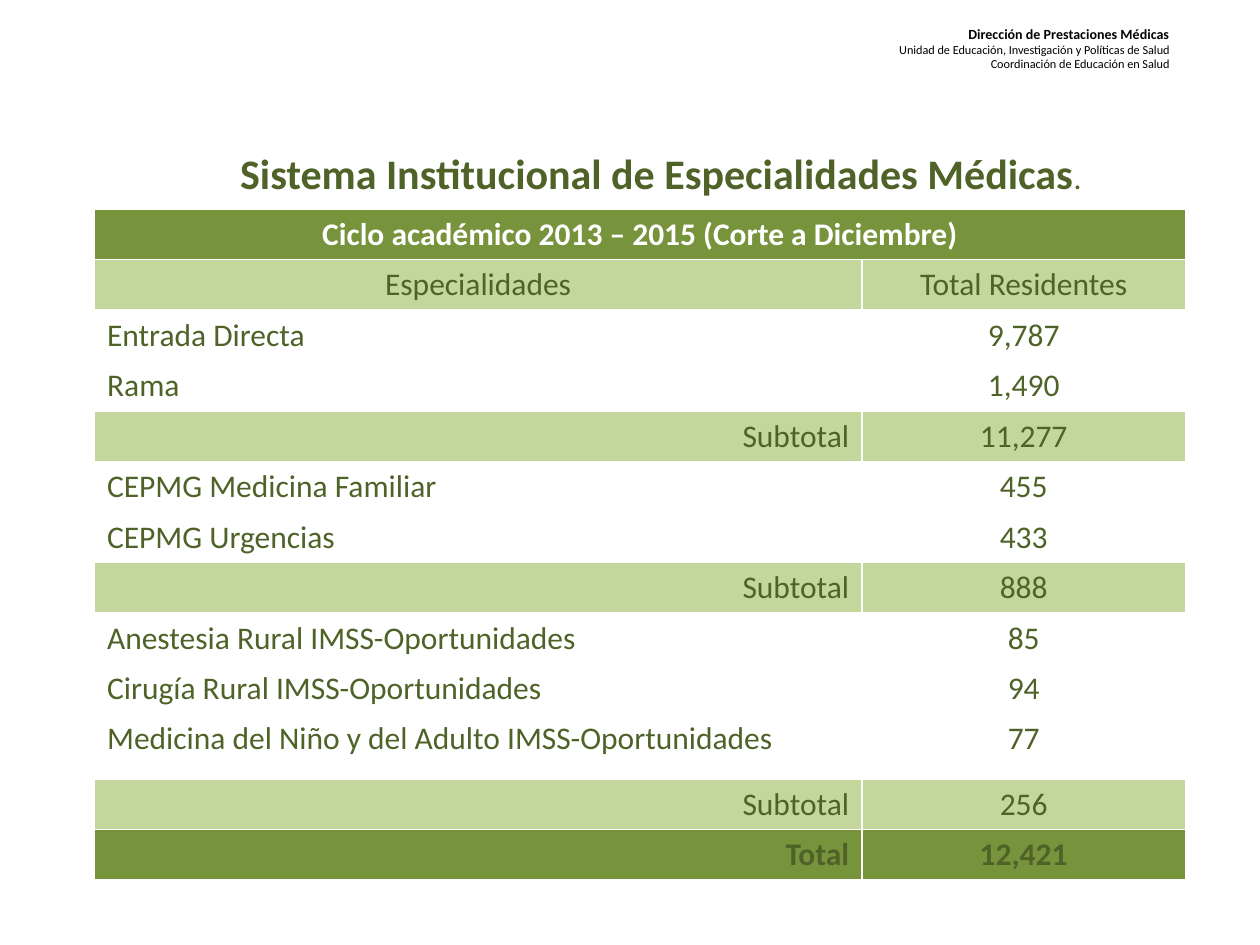
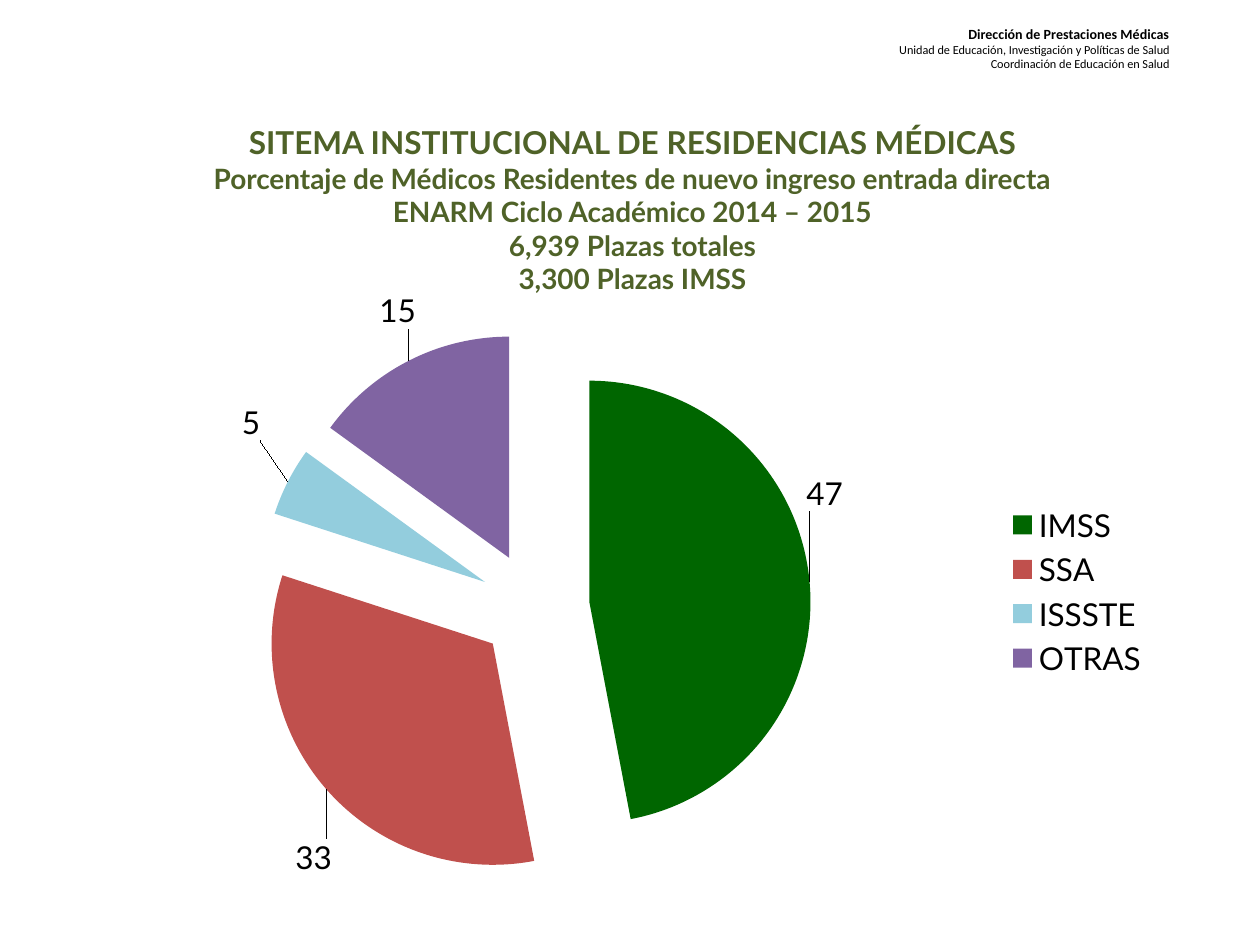
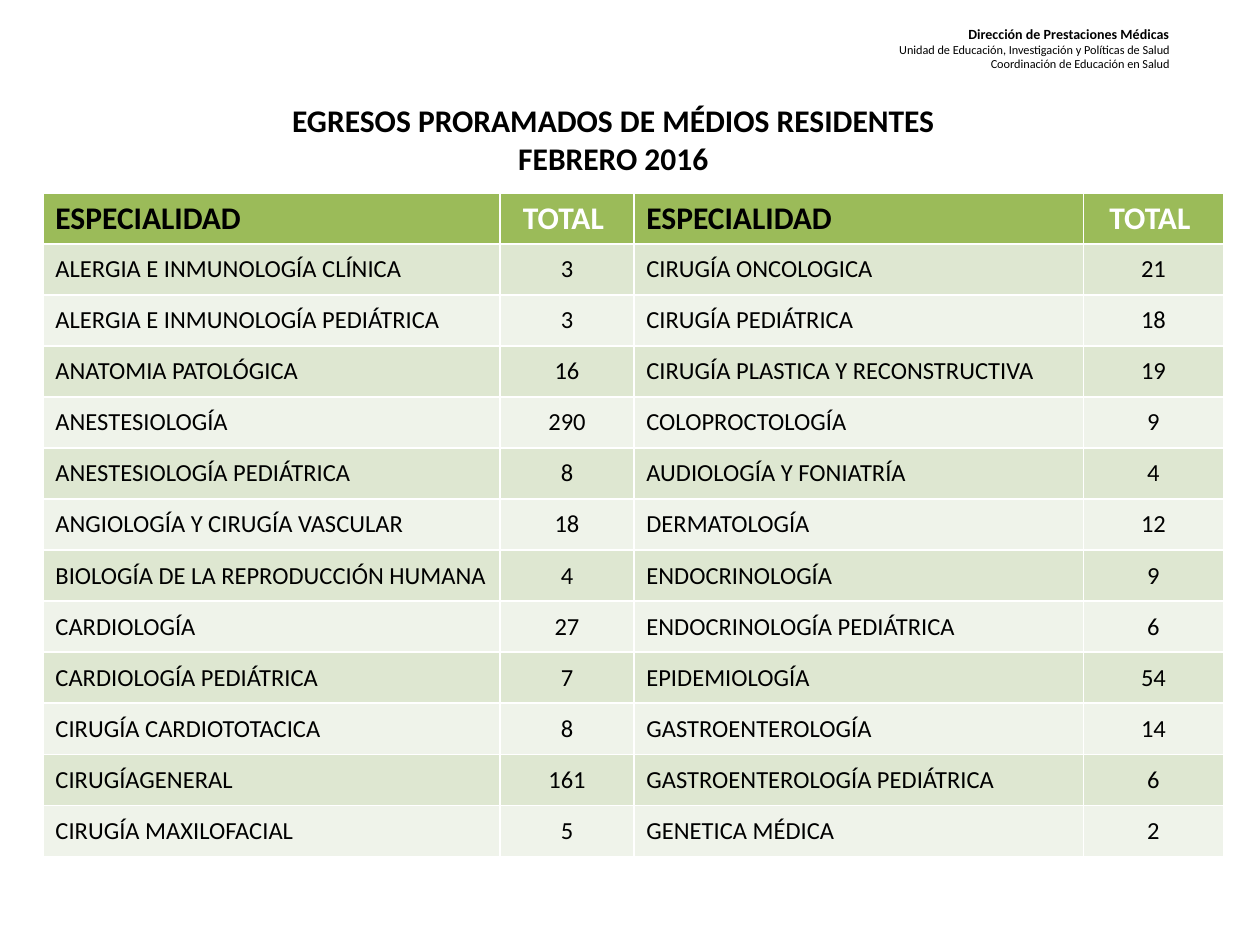
from pptx import Presentation
from pptx.chart.data import CategoryChartData
from pptx.dml.color import RGBColor
from pptx.enum.chart import XL_CHART_TYPE, XL_LABEL_POSITION, XL_LEGEND_POSITION
from pptx.enum.text import MSO_ANCHOR, PP_ALIGN
from pptx.oxml import parse_xml
from pptx.oxml.ns import nsdecls, qn
from pptx.util import Inches, Pt

LEFT, CENTER, RIGHT = PP_ALIGN.LEFT, PP_ALIGN.CENTER, PP_ALIGN.RIGHT
MIDDLE, TOP = MSO_ANCHOR.MIDDLE, MSO_ANCHOR.TOP
PIE = XL_CHART_TYPE.PIE
OUTSIDE_END = XL_LABEL_POSITION.OUTSIDE_END
LEGEND_RIGHT = XL_LEGEND_POSITION.RIGHT

BLACK, WHITE = "000000", "FFFFFF"
DARK_GREEN, MID_GREEN, PALE_GREEN = "4F6228", "77933C", "C3D69B"
HEADER_GREEN, BAND_DARK, BAND_LIGHT = "9BBB59", "DEE7D1", "EFF3EA"
BODY_FONT, CHART_FONT = "Calibri", "Lato"


def write_lines(text_frame, lines, color, font_name=BODY_FONT):
    """Write one paragraph per line; a line is (alignment, [(text, size, bold), ...])."""
    for index, (alignment, runs) in enumerate(lines):
        paragraph = text_frame.paragraphs[0] if index == 0 else text_frame.add_paragraph()
        paragraph.alignment = alignment
        for text, size, bold in runs:
            run = paragraph.add_run()
            run.text = text
            run.font.name = font_name
            run.font.size = Pt(size)
            run.font.bold = bold
            run.font.color.rgb = RGBColor.from_string(color)


def write_cell(cell, text, alignment, size, bold, color, fill, anchor=TOP):
    write_lines(cell.text_frame, [(alignment, [(text, size, bold)])], color)
    cell.vertical_anchor = anchor
    if fill:
        cell.fill.solid()
        cell.fill.fore_color.rgb = RGBColor.from_string(fill)
    else:
        cell.fill.background()


presentation = Presentation()
presentation.slide_width = Inches(10)
presentation.slide_height = Inches(7.5)

# Page header and title of every slide
page_header = [
    (RIGHT, [("Dirección de Prestaciones Médicas", 8, True)]),
    (RIGHT, [("Unidad de Educación, Investigación y Políticas de Salud", 7, False)]),
    (RIGHT, [("Coordinación de Educación en Salud", 7, False)]),
]
specialties_title = [
    (CENTER, [("Sistema Institucional de Especialidades Médicas", 24, True), (".", 18, False)]),
]
admissions_title = [
    (CENTER, [("SITEMA INSTITUCIONAL DE RESIDENCIAS MÉDICAS", 18, True)]),
    (CENTER, [("Porcentaje de Médicos Residentes de nuevo ingreso entrada directa", 16, True)]),
    (CENTER, [("ENARM Ciclo Académico 2014 – 2015", 16, True)]),
    (CENTER, [("6,939 Plazas totales", 16, True)]),
    (CENTER, [("3,300 Plazas IMSS", 16, True)]),
]
graduates_title = [
    (LEFT, [("EGRESOS PRORAMADOS DE MÉDIOS RESIDENTES", 18, True)]),
    (CENTER, [("FEBRERO 2016", 18, True)]),
]
titles = [
    (specialties_title, (0.98, 1.12, 8.53, 0.51), DARK_GREEN, BODY_FONT, True),
    (admissions_title, (0.35, 0.93, 9.34, 1.75), DARK_GREEN, CHART_FONT, True),
    (graduates_title, (2.22, 0.75, 5.41, 0.71), BLACK, BODY_FONT, False),
]
slides = []
for title, title_place, color, font_name, wraps in titles:
    slide = presentation.slides.add_slide(presentation.slide_layouts[6])
    slides.append(slide)
    header_place = (6.69, 0.15, 2.69, 0.62)
    for lines, place, text_color, font, wrap in (
        (page_header, header_place, BLACK, BODY_FONT, True),
        (title, title_place, color, font_name, wraps),
    ):
        text_frame = slide.shapes.add_textbox(*map(Inches, place)).text_frame
        text_frame.word_wrap = wrap
        write_lines(text_frame, lines, text_color, font)
specialties_slide, admissions_slide, graduates_slide = slides

# Slide 1: residents by specialty group
resident_rows = [
    ("Especialidades", "Total Residentes"),
    ("Entrada Directa", "9,787"),
    ("Rama", "1,490"),
    ("Subtotal", "11,277"),
    ("CEPMG Medicina Familiar", "455"),
    ("CEPMG Urgencias", "433"),
    ("Subtotal", "888"),
    ("Anestesia Rural IMSS-Oportunidades", "85"),
    ("Cirugía Rural IMSS-Oportunidades", "94"),
    ("Medicina del Niño y del Adulto IMSS-Oportunidades", "77"),
    ("Subtotal", "256"),
    ("Total", "12,421"),
]
row_styles = {  # label: (alignment, fill)
    "Especialidades": (CENTER, PALE_GREEN),
    "Subtotal": (RIGHT, PALE_GREEN),
    "Total": (RIGHT, MID_GREEN),
}
table = specialties_slide.shapes.add_table(
    len(resident_rows) + 1, 2, Inches(0.75), Inches(1.66), Inches(8.66), Inches(5.32)
).table
table.horz_banding = False
table.columns[0].width = Inches(6.09)
table.columns[1].width = Inches(2.57)
for row in table.rows:
    row.height = Inches(0.4)
table.rows[10].height = Inches(0.52)
table.cell(0, 0).merge(table.cell(0, 1))
write_cell(table.cell(0, 0), "Ciclo académico 2013 – 2015 (Corte a Diciembre)",
           CENTER, 18, True, WHITE, MID_GREEN)
for row_index, (label, count) in enumerate(resident_rows, start=1):
    alignment, fill = row_styles.get(label, (LEFT, None))
    bold = label == "Total"
    write_cell(table.cell(row_index, 0), label, alignment, 18, bold, DARK_GREEN, fill)
    write_cell(table.cell(row_index, 1), count, CENTER, 18, bold, DARK_GREEN, fill)

# Slide 2: share of new residents by institution
institutions = [  # name, percentage, colour, label offset as a share of the chart
    ("IMSS", 47, "006600", (-0.01, -0.11)),
    ("SSA", 33, "C0504D", (0.01, 0.07)),
    ("ISSSTE", 5, "93CDDD", (-0.02, -0.06)),
    ("OTRAS", 15, "8064A2", (0.01, -0.04)),
]
chart_data = CategoryChartData(number_format="#,##0")
chart_data.categories = [name for name, *_ in institutions]
chart_data.add_series("Series 1", [percentage for _, percentage, *_ in institutions])
chart = admissions_slide.shapes.add_chart(
    PIE, Inches(0.78), Inches(2.22), Inches(8.44), Inches(4.95), chart_data
).chart
chart.has_title = False
chart.font.name = CHART_FONT
chart.font.size = Pt(18)
chart.font.color.rgb = RGBColor.from_string(BLACK)
chart.has_legend = True
chart.legend.position = LEGEND_RIGHT
chart.legend.include_in_layout = False
plot = chart.plots[0]
plot.vary_by_categories = True
series = plot.series[0]
series.data_labels.show_value = True
series.data_labels.number_format = "#,##0"
series.data_labels.number_format_is_linked = False
for index, (_, _, color, _) in enumerate(institutions):
    point = series.points[index]
    point.format.fill.solid()
    point.format.fill.fore_color.rgb = RGBColor.from_string(color)
    point.data_label.position = OUTSIDE_END

series_element = series._element
series_element.find(qn("c:tx")).addnext(
    parse_xml(f'<c:explosion {nsdecls("c")} val="25"/>'))
for label, (*_, (x, y)) in zip(series_element.iter(qn("c:dLbl")), institutions):
    label.find(qn("c:idx")).addnext(parse_xml(
        f'<c:layout {nsdecls("c")}><c:manualLayout>'
        f'<c:x val="{x}"/><c:y val="{y}"/></c:manualLayout></c:layout>'))
plot_area = chart._chartSpace.chart.plotArea
for old_layout in plot_area.findall(qn("c:layout")):
    plot_area.remove(old_layout)
plot_area.insert(0, parse_xml(
    f'<c:layout {nsdecls("c")}><c:manualLayout><c:layoutTarget val="inner"/>'
    '<c:xMode val="edge"/><c:yMode val="edge"/><c:x val="0.15"/><c:y val="0.08"/>'
    '<c:w val="0.52"/><c:h val="0.89"/></c:manualLayout></c:layout>'))

# Slide 3: residents due to finish, two specialties per row
graduate_rows = [
    ("ALERGIA E INMUNOLOGÍA CLÍNICA", 3, "CIRUGÍA ONCOLOGICA", 21),
    ("ALERGIA E INMUNOLOGÍA PEDIÁTRICA", 3, "CIRUGÍA PEDIÁTRICA", 18),
    ("ANATOMIA PATOLÓGICA", 16, "CIRUGÍA PLASTICA Y RECONSTRUCTIVA", 19),
    ("ANESTESIOLOGÍA", 290, "COLOPROCTOLOGÍA", 9),
    ("ANESTESIOLOGÍA PEDIÁTRICA", 8, "AUDIOLOGÍA Y FONIATRÍA", 4),
    ("ANGIOLOGÍA Y CIRUGÍA VASCULAR", 18, "DERMATOLOGÍA", 12),
    ("BIOLOGÍA DE LA REPRODUCCIÓN HUMANA", 4, "ENDOCRINOLOGÍA", 9),
    ("CARDIOLOGÍA", 27, "ENDOCRINOLOGÍA PEDIÁTRICA", 6),
    ("CARDIOLOGÍA PEDIÁTRICA", 7, "EPIDEMIOLOGÍA", 54),
    ("CIRUGÍA CARDIOTOTACICA", 8, "GASTROENTEROLOGÍA", 14),
    ("CIRUGÍAGENERAL", 161, "GASTROENTEROLOGÍA PEDIÁTRICA", 6),
    ("CIRUGÍA MAXILOFACIAL", 5, "GENETICA MÉDICA", 2),
]
table = graduates_slide.shapes.add_table(
    len(graduate_rows) + 1, 4, Inches(0.34), Inches(1.53), Inches(9.36), Inches(5.27)
).table
table.horz_banding = False
for column, width in zip(table.columns, (3.63, 1.06, 3.57, 1.11)):
    column.width = Inches(width)
for column_index, (text, alignment, color) in enumerate(
    [("ESPECIALIDAD", LEFT, BLACK), ("TOTAL ", CENTER, WHITE)] * 2
):
    write_cell(table.cell(0, column_index), text, alignment, 18, True, color, HEADER_GREEN)
for row_index, values in enumerate(graduate_rows, start=1):
    fill = BAND_DARK if row_index % 2 else BAND_LIGHT
    for column_index, value in enumerate(values):
        alignment = CENTER if column_index % 2 else LEFT
        write_cell(table.cell(row_index, column_index), str(value), alignment,
                   14, False, BLACK, fill, MIDDLE)

presentation.save("out.pptx")
